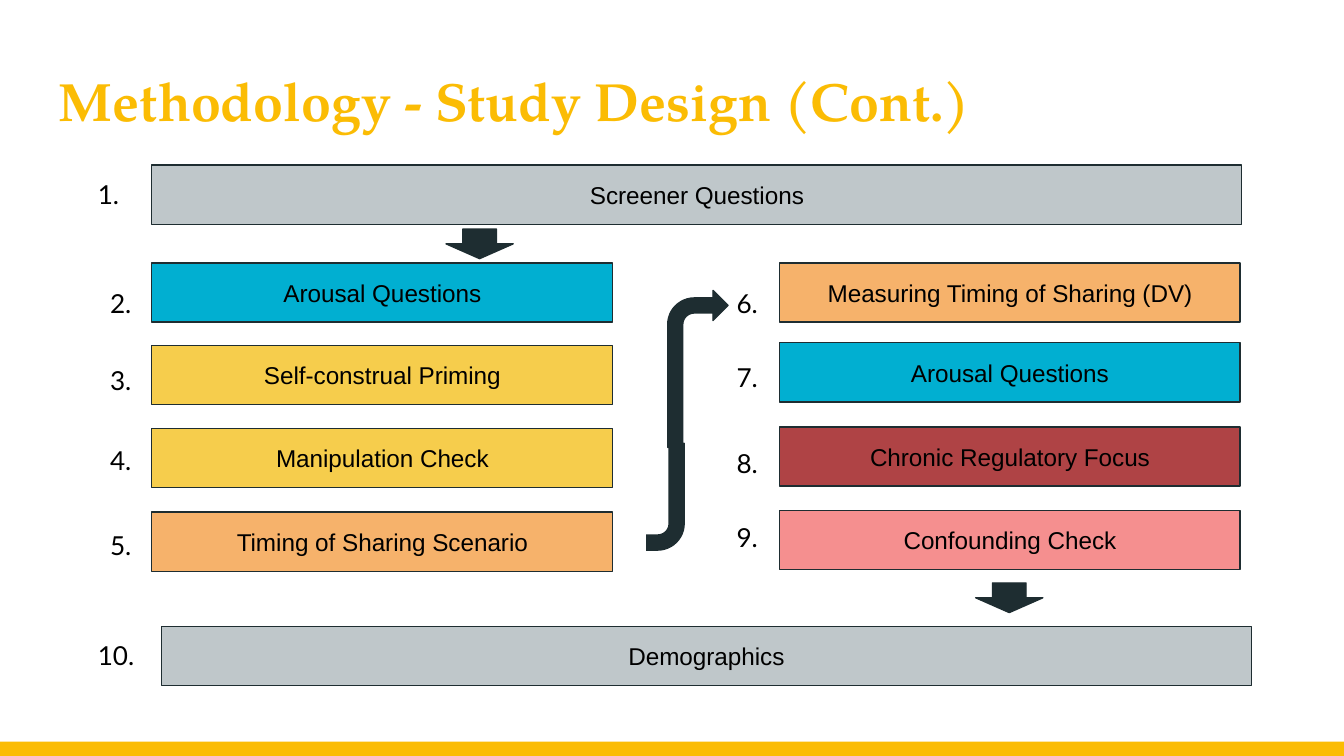
from dataclasses import dataclass

from pptx import Presentation
from pptx import util as u
from pptx.dml.color import RGBColor
from pptx.enum import shapes, text

WHITE = RGBColor(0xFF, 0xFF, 0xFF)
BLACK = RGBColor(0x00, 0x00, 0x00)
AMBER = RGBColor(0xFB, 0xBC, 0x04)
INK = RGBColor(0x1E, 0x2D, 0x31)
GREY = RGBColor(0xBF, 0xC7, 0xCA)
BLUE = RGBColor(0x01, 0xAF, 0xD1)
YELLOW = RGBColor(0xF6, 0xCD, 0x4C)
ORANGE = RGBColor(0xF6, 0xB2, 0x6B)
RED = RGBColor(0xAF, 0x43, 0x45)
PINK = RGBColor(0xF5, 0x8F, 0x8F)

BOX_HEIGHT = 1.12
INSET = 0.25
PRESET = shapes.MSO_SHAPE


@dataclass(frozen=True)
class Column:
    number_left: float
    number_width: float
    box_left: float
    box_width: float


@dataclass(frozen=True)
class Step:
    label: str
    fill: RGBColor
    column: Column
    box_top: float
    number_top: float


@dataclass(frozen=True)
class Arrow:
    preset: shapes.MSO_SHAPE
    left: float
    top: float
    width: float
    height: float
    adjustments: tuple[float, ...]
    rotation: int = 0


TOP = Column(1.6, 0.99, 2.87, 20.6)
LEFT = Column(1.83, 0.99, 2.87, 8.71)
RIGHT = Column(13.67, 0.99, 14.73, 8.71)
BOTTOM = Column(1.6, 1.27, 3.05, 20.6)

STEPS = [
    Step("Screener Questions", GREY, TOP, 3.12, 3.12),
    Step("Arousal Questions", BLUE, LEFT, 4.97, 5.18),
    Step("Self-construal Priming", YELLOW, LEFT, 6.53, 6.63),
    Step("Manipulation Check", YELLOW, LEFT, 8.1, 8.15),
    Step("Timing of Sharing Scenario", ORANGE, LEFT, 9.68, 9.75),
    Step("Measuring Timing of Sharing (DV)", ORANGE, RIGHT, 4.97, 5.18),
    Step("Arousal Questions", BLUE, RIGHT, 6.48, 6.58),
    Step("Chronic Regulatory Focus", RED, RIGHT, 8.07, 8.2),
    Step("Confounding Check", PINK, RIGHT, 9.65, 9.6),
    Step("Demographics", GREY, BOTTOM, 11.84, 11.84),
]

DOWN = (0.5, 0.5)
BENT = (0.25, 0.25, 0.25, 0.44)
ARROWS = [
    Arrow(PRESET.DOWN_ARROW, 8.43, 4.33, 1.27, 0.56, DOWN),
    Arrow(PRESET.DOWN_ARROW, 18.44, 11.02, 1.27, 0.56, DOWN),
    Arrow(PRESET.BENT_ARROW, 12.62, 5.49, 1.14, 2.97, BENT),
    Arrow(PRESET.BENT_ARROW, 11.79, 8.38, 1.14, 2.16, BENT, 180),
]


def add_shape(slide, preset, left: float, top: float, width: float,
              height: float, fill: RGBColor, line: RGBColor):
    shape = slide.shapes.add_shape(
        preset, u.Cm(left), u.Cm(top), u.Cm(width), u.Cm(height))
    shape.shadow.inherit = False
    shape.fill.solid()
    shape.fill.fore_color.rgb = fill
    shape.line.color.rgb = line
    shape.line.width = u.Pt(0.75)
    return shape


def write(shape, content: str, font_name: str, size: float,
          color: RGBColor = BLACK, bold: bool = False,
          alignment=text.PP_ALIGN.LEFT, anchor=text.MSO_ANCHOR.TOP) -> None:
    frame = shape.text_frame
    frame.text = content
    frame.word_wrap = True
    frame.vertical_anchor = anchor
    frame.margin_left = frame.margin_right = u.Cm(INSET)
    frame.margin_top = frame.margin_bottom = u.Cm(INSET)
    paragraph = frame.paragraphs[0]
    paragraph.alignment = alignment
    font = paragraph.runs[0].font
    font.name = font_name
    font.size = u.Pt(size)
    font.bold = bold
    font.color.rgb = color


def add_text_box(slide, left: float, top: float, width: float, height: float):
    return slide.shapes.add_textbox(
        u.Cm(left), u.Cm(top), u.Cm(width), u.Cm(height))


def add_step(slide, number: int, step: Step) -> None:
    column = step.column
    box = add_shape(slide, PRESET.RECTANGLE, column.box_left, step.box_top,
                    column.box_width, BOX_HEIGHT, step.fill, INK)
    write(box, step.label, "Arial", 13, alignment=text.PP_ALIGN.CENTER,
          anchor=text.MSO_ANCHOR.MIDDLE)
    number_box = add_text_box(slide, column.number_left, step.number_top,
                              column.number_width, BOX_HEIGHT)
    write(number_box, f"{number}.", "Lato", 14)


def add_arrow(slide, arrow: Arrow) -> None:
    shape = add_shape(slide, arrow.preset, arrow.left, arrow.top,
                      arrow.width, arrow.height, INK, INK)
    shape.rotation = arrow.rotation
    for index, value in enumerate(arrow.adjustments):
        shape.adjustments[index] = value


def main() -> None:
    presentation = Presentation()
    presentation.slide_width = u.Cm(25.4)
    presentation.slide_height = u.Cm(14.29)
    slide = presentation.slides.add_slide(presentation.slide_layouts[6])

    footer = add_shape(slide, PRESET.RECTANGLE, 0, 14.02, 25.4, 0.27,
                       AMBER, AMBER)
    footer.line.fill.background()
    title = add_text_box(slide, 0.86, 1.04, 23.67, 1.8)
    write(title, "Methodology - Study Design (Cont.)", "TeX Gyre Pagella",
          28.8, AMBER, bold=True)

    for number, step in enumerate(STEPS, start=1):
        add_step(slide, number, step)
    for arrow in ARROWS:
        add_arrow(slide, arrow)
    add_shape(slide, PRESET.RECTANGLE, 11.61, 9.7, 0.58, BOX_HEIGHT,
              WHITE, WHITE)

    presentation.save("out.pptx")


if __name__ == "__main__":
    main()
